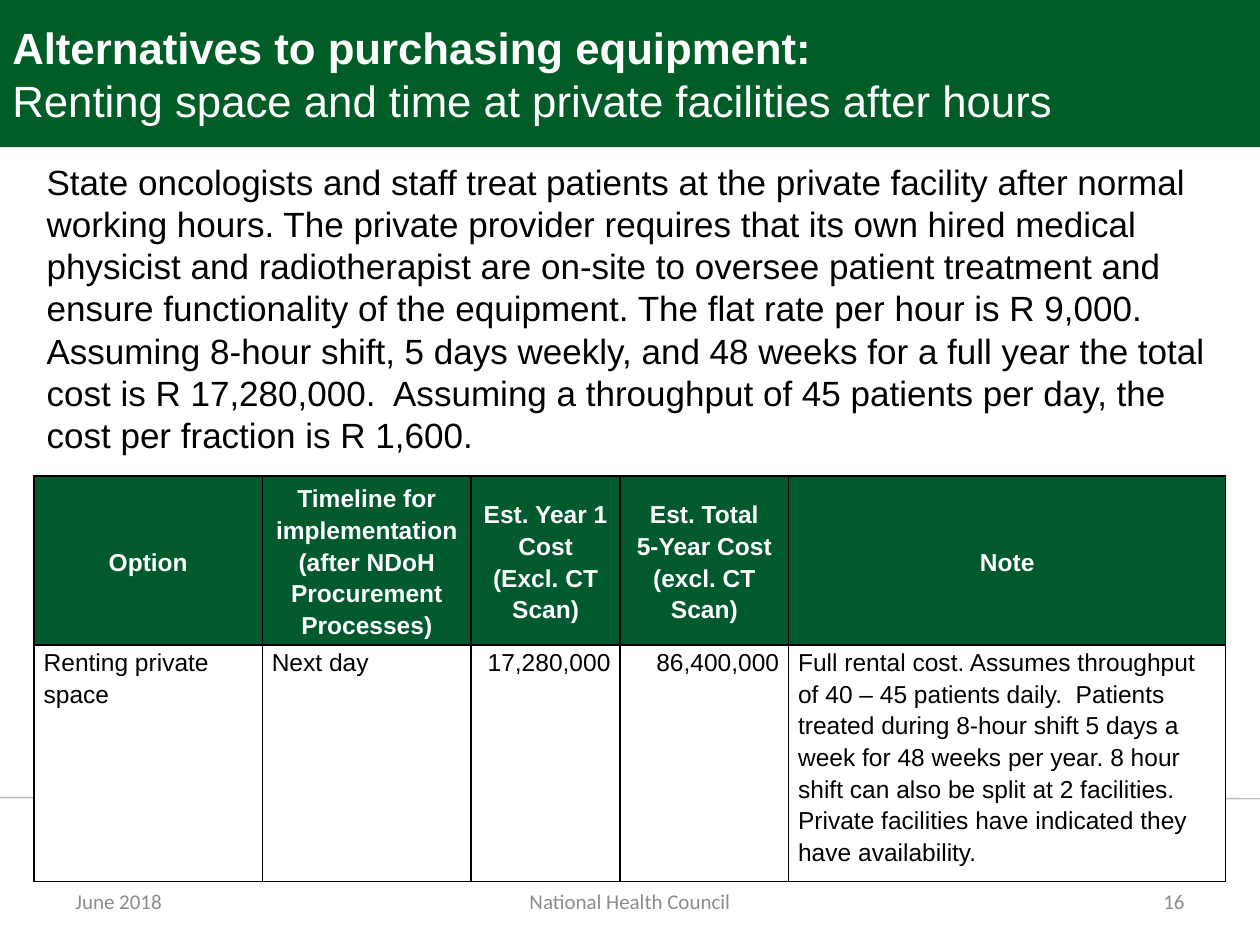
from dataclasses import dataclass
from typing import Any

from lxml import etree
from pptx import Presentation
from pptx import util as u
from pptx.dml.color import RGBColor
from pptx.enum import shapes, text
from pptx.oxml.ns import qn

GREEN = RGBColor(0x00, 0x5D, 0x28)
HEADER_GREEN = RGBColor(0x00, 0x5A, 0x2E)
WHITE = RGBColor(0xFF, 0xFF, 0xFF)
BLACK = RGBColor(0, 0, 0)
GREY = RGBColor(0x8C, 0x8C, 0x8C)
RULE_GREY = RGBColor(0xBF, 0xBF, 0xBF)

LEFT, CENTER, RIGHT = text.PP_ALIGN.LEFT, text.PP_ALIGN.CENTER, text.PP_ALIGN.RIGHT
TOP, MIDDLE = text.MSO_ANCHOR.TOP, text.MSO_ANCHOR.MIDDLE

BODY = (
    "State oncologists and staff treat patients at the private facility after normal "
    "working hours. The private provider requires that its own hired medical physicist "
    "and radiotherapist are on-site to oversee patient treatment and ensure functionality "
    "of the equipment. The flat rate per hour is R 9,000. Assuming 8-hour shift, 5 days "
    "weekly, and 48 weeks for a full year the total cost is R 17,280,000.  Assuming a "
    "throughput of 45 patients per day, the cost per fraction is R 1,600."
)
NOTE = (
    "Full rental cost. Assumes throughput of 40 – 45 patients daily.  Patients treated "
    "during 8-hour shift 5 days a week for 48 weeks per year. 8 hour shift can also be "
    "split at 2 facilities.  Private facilities have indicated they have availability."
)
HEADERS = [
    ["Option"],
    ["Timeline for implementation", "(after NDoH Procurement Processes)"],
    ["Est. Year 1 Cost", "(Excl. CT Scan)"],
    ["Est. Total", "5-Year Cost", "(excl. CT Scan)"],
    ["Note"],
]
VALUES = [["Renting private space"], ["Next day"], ["17,280,000"], ["86,400,000"], [NOTE]]
VALUE_ALIGNS = [LEFT, LEFT, RIGHT, RIGHT, LEFT]


@dataclass
class SlideBuilder:
    s: Any
    font: str = "Arial"
    footer_font: str = "Calibri"

    def style(self, target, color, **formats):
        for name, value in formats.items():
            setattr(target.font, name, value)
        target.font.color.rgb = color

    def rule(self, x1, y1, x2, y2):
        line = self.s.shapes.add_connector(
            shapes.MSO_CONNECTOR.STRAIGHT, u.Cm(x1), u.Cm(y1), u.Cm(x2), u.Cm(y2))
        line.line.color.rgb = RULE_GREY
        line.line.width = u.Pt(0.75)
        etree.SubElement(line._element.spPr, qn("a:effectLst"))

    def title(self, x, y, w, h, heading, subheading):
        sp = self.s.shapes.add_shape(
            shapes.MSO_SHAPE.RECTANGLE, u.Cm(x), u.Cm(y), u.Cm(w), u.Cm(h))
        sp.shadow.inherit = False
        sp.fill.solid()
        sp.fill.fore_color.rgb = GREEN
        sp.line.fill.background()
        tf = sp.text_frame
        tf.word_wrap, tf.vertical_anchor = True, MIDDLE
        p = tf.paragraphs[0]
        p.alignment = LEFT
        for i, (words, bold) in enumerate([(heading, True), (subheading, False)]):
            if i:
                p.add_line_break()
            r = p.add_run()
            r.text = words
            self.style(r, WHITE, name=self.font, size=u.Pt(25), bold=bold)

    def textbox(self, x, y, w, h, words, color, font, size, align=LEFT, anchor=TOP):
        tf = self.s.shapes.add_textbox(u.Cm(x), u.Cm(y), u.Cm(w), u.Cm(h)).text_frame
        tf.word_wrap, tf.vertical_anchor = True, anchor
        p = tf.paragraphs[0]
        p.text, p.alignment = words, align
        self.style(p.runs[0], color, name=font, size=u.Pt(size))

    def footer(self, x, w, words, align):
        self.textbox(x, 17.65, w, 1.02, words, GREY, self.footer_font, 12, align, MIDDLE)

    def border(self, cell):
        """Draw a black 1 pt line on all four sides; must precede the fill."""
        tc_pr = cell._tc.get_or_add_tcPr()
        for side in ("a:lnL", "a:lnR", "a:lnT", "a:lnB"):
            ln = etree.SubElement(tc_pr, qn(side), w=str(u.Pt(1)))
            fill = etree.SubElement(ln, qn("a:solidFill"))
            etree.SubElement(fill, qn("a:srgbClr"), val=str(BLACK))

    def cell(self, cell, lines, fill, color, bold, align, anchor):
        self.border(cell)
        cell.fill.solid()
        cell.fill.fore_color.rgb = fill
        cell.vertical_anchor = anchor
        cell.margin_left = cell.margin_right = u.Cm(0.19)
        cell.margin_top = cell.margin_bottom = 0
        tf = cell.text_frame
        for i, words in enumerate(lines):
            p = tf.add_paragraph() if i else tf.paragraphs[0]
            p.text, p.alignment, p.line_spacing = words, align, 1.15
            self.style(p.runs[0], color, name=self.font, size=u.Pt(14), bold=bold)

    def table(self, x, y, widths, heights):
        table = self.s.shapes.add_table(
            len(heights), len(widths), u.Cm(x), u.Cm(y),
            u.Cm(sum(widths)), u.Cm(sum(heights))).table
        for column, width in zip(table.columns, widths):
            column.width = u.Cm(width)
        for row, height in zip(table.rows, heights):
            row.height = u.Cm(height)
        for i, (header, value, align) in enumerate(zip(HEADERS, VALUES, VALUE_ALIGNS)):
            self.cell(table.cell(0, i), header, HEADER_GREEN, WHITE, True, CENTER, MIDDLE)
            self.cell(table.cell(1, i), value, WHITE, BLACK, False, align, TOP)


def main():
    prs = Presentation()
    prs.slide_width, prs.slide_height = u.Cm(25.4), u.Cm(19.05)
    b = SlideBuilder(prs.slides.add_slide(prs.slide_layouts[6]))

    b.rule(0, 16.08, 25.4, 16.1)
    b.title(0, 0, 25.4, 2.97, "Alternatives to purchasing equipment:",
            "Renting space and time at private facilities after hours")
    b.textbox(0.69, 3.12, 23.88, 6.2, BODY, BLACK, b.font, 20)
    b.footer(1.27, 5.93, "June 2018", LEFT)
    b.footer(8.68, 8.04, "National Health Council", CENTER)
    b.footer(18.2, 5.93, "16", RIGHT)
    b.table(0.69, 9.6, [4.6, 4.21, 3, 3.4, 8.81], [3.2, 4.46])

    prs.save("out.pptx")


if __name__ == "__main__":
    main()
